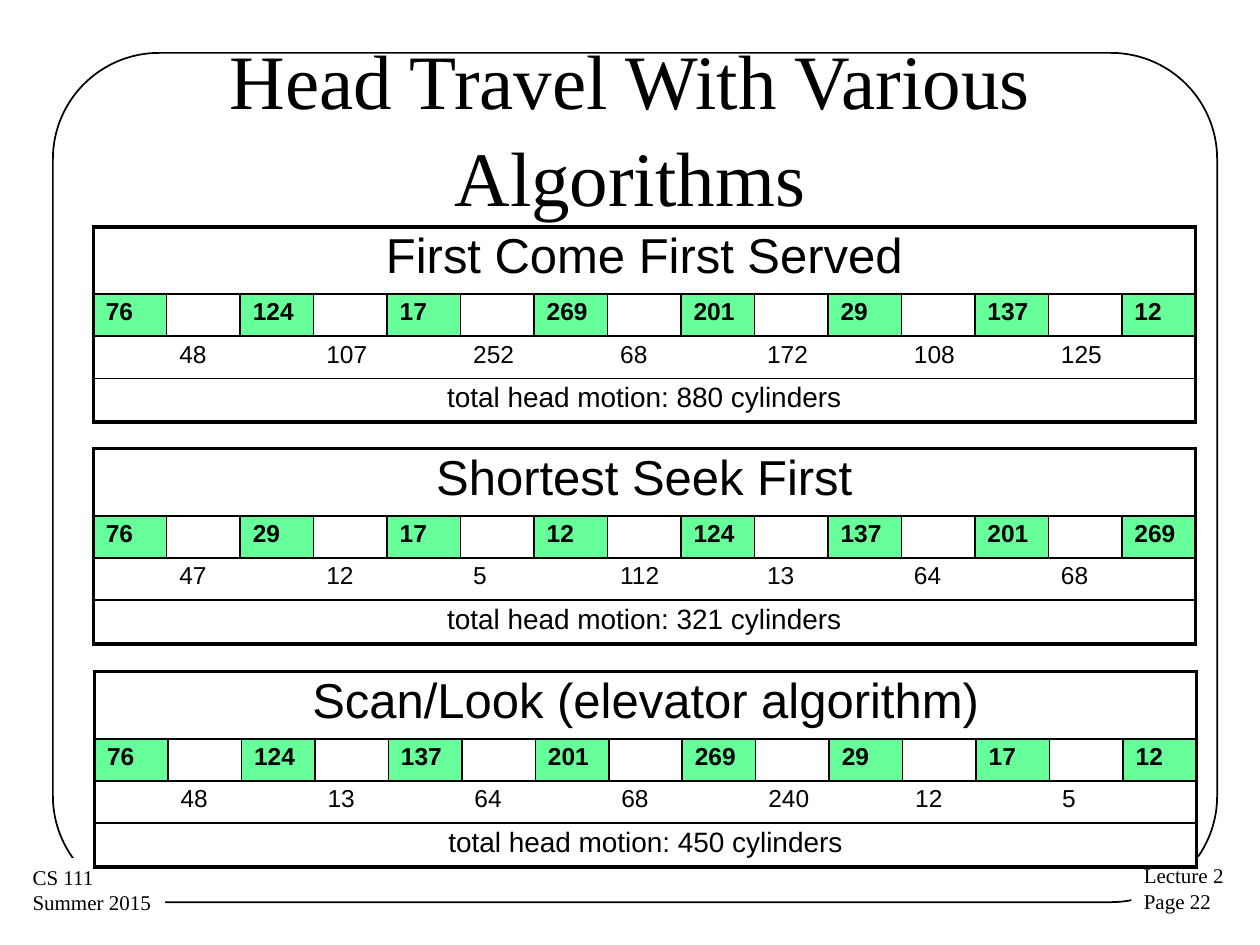
"""Build the slide comparing disk head travel under three scheduling algorithms."""
from lxml import etree
from pptx import Presentation
from pptx.dml.color import RGBColor
from pptx.enum import shapes, text
from pptx.oxml.ns import qn
from pptx.util import Emu, Inches, Pt

INK, WHITE, VISITED = "000000", "FFFFFF", "66FF99"
STOPS = 8
COLUMNS = 2 * STOPS - 1
ROW_HEIGHTS = [0.5, 0.32, 0.32, 0.33]
ROW_SIZES = [28, 14, 14, 16]
SIDES = ["lnL", "lnR", "lnT", "lnB"]

schedules = [
    ("Scan/Look (elevator algorithm)", 0.75, 5.33, 450,
     [76, 124, 137, 201, 269, 29, 17, 12], [48, 13, 64, 68, 240, 12, 5]),
    ("First Come First Served", 0.74, 1.8, 880,
     [76, 124, 17, 269, 201, 29, 137, 12], [48, 107, 252, 68, 172, 108, 125]),
    ("Shortest Seek First", 0.74, 3.56, 321,
     [76, 29, 17, 12, 124, 137, 201, 269], [47, 12, 5, 112, 13, 64, 68]),
]


def color(value):
    return RGBColor.from_string(value)


def set_borders(cell, widths):
    properties = cell._tc.get_or_add_tcPr()
    for side, width in zip(SIDES, widths):
        border = etree.SubElement(properties, qn(f"a:{side}"), w=str(Pt(width)))
        if width:
            fill = etree.SubElement(border, qn("a:solidFill"))
            etree.SubElement(fill, qn("a:srgbClr"), val=INK)
        else:
            etree.SubElement(border, qn("a:noFill"))


prs = Presentation()
prs.slide_width, prs.slide_height = Inches(10), Inches(7.5)
slide = prs.slides.add_slide(prs.slide_layouts[5])

frame = slide.shapes.add_shape(shapes.MSO_SHAPE.ROUNDED_RECTANGLE,
                               Inches(0.42), Inches(0.42), Inches(9.24), Inches(6.74))
frame.adjustments[0] = 0.125
frame.shadow.inherit = False
frame.fill.background()
frame.line.color.rgb = color(INK)
frame.line.width = Pt(1)

for wording, left, top, width in [("Lecture 2\nPage 22", 8.98, 6.8, 0.84),
                                  ("CS 111\nSummer 2015", 0.16, 6.81, 1.15)]:
    footer = slide.shapes.add_textbox(Inches(left), Inches(top), Inches(width), Inches(0.51))
    footer.fill.solid()
    footer.fill.fore_color.rgb = color(WHITE)
    footer.text_frame.text = wording
    footer.text_frame.word_wrap = False
    footer.text_frame.auto_size = text.MSO_AUTO_SIZE.SHAPE_TO_FIT_TEXT
    for paragraph in footer.text_frame.paragraphs:
        font = paragraph.runs[0].font
        font.name, font.size = "Times New Roman", Pt(12)
        font.color.rgb = color(INK)

title = slide.shapes.title
title.left, title.top, title.width, title.height = map(Inches, (0.5, 0.37, 9, 1.25))
title.text_frame.text = "Head Travel With Various Algorithms"
title.text_frame.word_wrap = True
title.text_frame.auto_size = text.MSO_AUTO_SIZE.NONE
title.text_frame.vertical_anchor = text.MSO_ANCHOR.MIDDLE
heading = title.text_frame.paragraphs[0]
heading.alignment = text.PP_ALIGN.CENTER
heading.line_spacing = 1.04
heading.runs[0].font.name = "Times New Roman"
heading.runs[0].font.size = Pt(44)
heading.runs[0].font.color.rgb = color(INK)

for name, left, top, total, cylinders, moves in schedules:
    schedule = slide.shapes.add_table(4, COLUMNS, Inches(left), Inches(top),
                                      Inches(8.75), Inches(sum(ROW_HEIGHTS))).table
    schedule.first_row = schedule.horz_banding = False
    for column in schedule.columns:
        column.width = Emu(Inches(8.75) // COLUMNS)

    wordings = {(0, 0): name, (3, 0): f"total head motion: {total} cylinders"}
    wordings.update({(1, 2 * i): str(stop) for i, stop in enumerate(cylinders)})
    wordings.update({(2, 2 * i + 1): str(move) for i, move in enumerate(moves)})

    for r, height in enumerate(ROW_HEIGHTS):
        schedule.rows[r].height = Inches(height)
        spanned = r in (0, 3)
        if spanned:
            schedule.cell(r, 0).merge(schedule.cell(r, COLUMNS - 1))
        inner = 1 if r == 1 else 0
        for c in range(COLUMNS):
            cell = schedule.cell(r, c)
            set_borders(cell, [2.25 if c == 0 else inner,
                               2.25 if c == COLUMNS - 1 or (spanned and c == 0) else inner,
                               2.25 if r == 0 else 1,
                               2.25 if r == 3 else 1])
            if r == 1 and c % 2 == 0:
                cell.fill.solid()
                cell.fill.fore_color.rgb = color(VISITED)
            else:
                cell.fill.background()

            paragraph = cell.text_frame.paragraphs[0]
            if (r, c) not in wordings:
                etree.SubElement(paragraph._p, qn("a:endParaRPr"), sz=str(ROW_SIZES[r] * 100))
                continue
            paragraph.text = wordings[r, c]
            paragraph.alignment = text.PP_ALIGN.CENTER if spanned else text.PP_ALIGN.LEFT
            paragraph.line_spacing = 0.93
            paragraph.space_after = Pt(14.1)
            indents = paragraph._p.get_or_add_pPr()
            indents.set("marL", str(Inches(0.12)))
            indents.set("indent", str(Inches(-0.12)))
            font = paragraph.runs[0].font
            font.name, font.size, font.bold = "Arial", Pt(ROW_SIZES[r]), r == 1
            font.color.rgb = color(INK)

prs.save("out.pptx")
